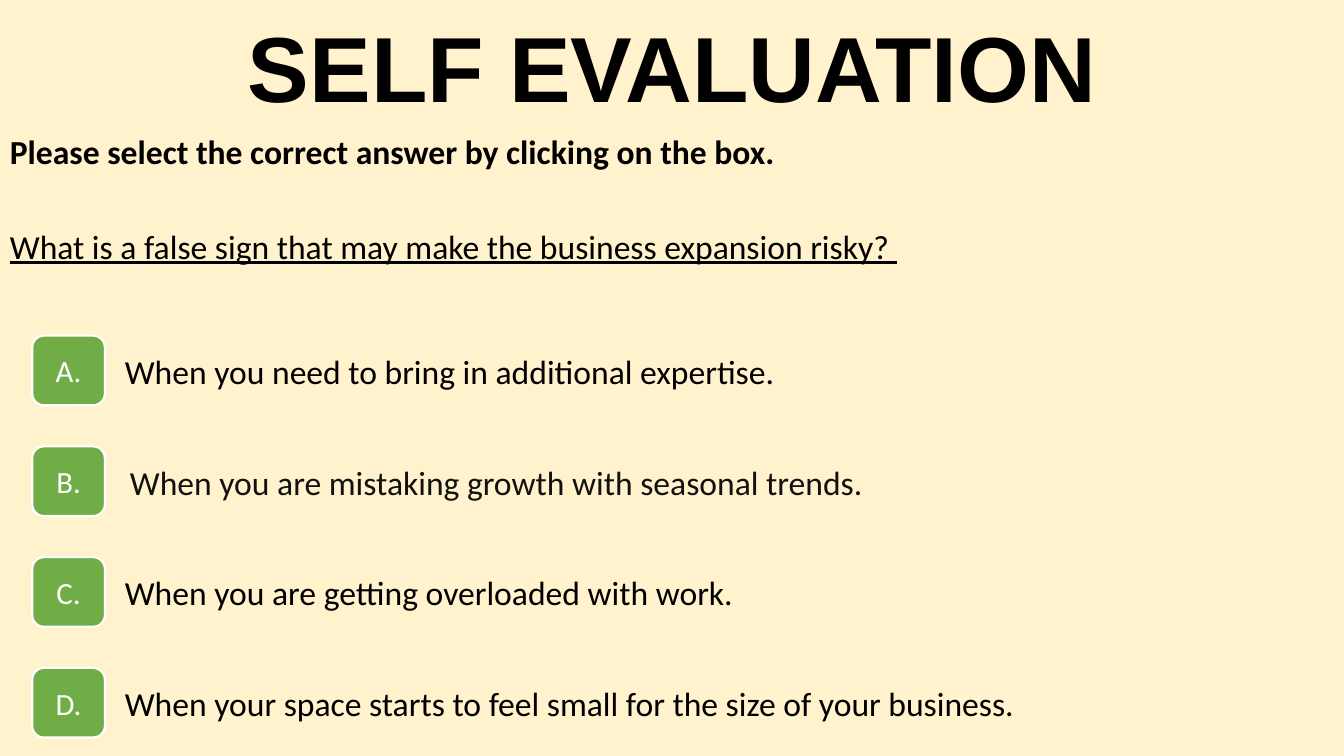
from pptx import Presentation, util as u
from pptx.dml.color import RGBColor
from pptx.enum import shapes, text

CREAM = RGBColor(0xFF, 0xF2, 0xCC)
GREEN = RGBColor(0x70, 0xAD, 0x47)
WHITE = RGBColor(0xFF, 0xFF, 0xFF)
BLACK = RGBColor(0, 0, 0)
CHARCOAL = RGBColor(0x11, 0x11, 0x11)

WIDTH, HEIGHT = u.Inches(13.333), u.Inches(7.5)
FIRST_ROW, ROW_STEP = 44.4, 14.65
ANSWER_DROP = 1.3

ANSWERS = [
    ("A.", "When you need to bring in additional expertise.", {}),
    ("B.", "When you are mistaking growth with seasonal trends.",
     dict(left=8.93, drop=0, color=CHARCOAL, spacing=1.25, after=8)),
    ("C.", "When you are getting overloaded with work.", {}),
    ("D.", "When your space starts to feel small for the size of your business.", {}),
]


def area(left, top, width, height):
    return (int(WIDTH * left / 100), int(HEIGHT * top / 100),
            int(WIDTH * width / 100), int(HEIGHT * height / 100))


def write(sp, words, size=24, font="Calibri", color=BLACK, bold=False,
          underline=False, align=text.PP_ALIGN.LEFT,
          anchor=text.MSO_ANCHOR.TOP, spacing=None, after=None):
    tf = sp.text_frame
    tf.word_wrap = True
    tf.vertical_anchor = anchor
    p = tf.paragraphs[0]
    p.alignment = align
    if spacing is not None:
        p.line_spacing = spacing
    if after is not None:
        p.space_after = u.Pt(after)
    r = p.add_run()
    r.text = words
    r.font.size = u.Pt(size)
    r.font.name = font
    r.font.bold = bold
    r.font.underline = underline
    r.font.color.rgb = color


def add_text(s, box, words, **style):
    sp = s.shapes.add_textbox(*area(*box))
    write(sp, words, **style)


def add_button(s, top, letter):
    sp = s.shapes.add_shape(shapes.MSO_SHAPE.ROUNDED_RECTANGLE,
                            *area(2.4, top, 5.4, 9.2))
    sp.shadow.inherit = False
    sp.fill.solid()
    sp.fill.fore_color.rgb = GREEN
    sp.line.color.rgb = WHITE
    sp.line.width = u.Pt(1.5)
    write(sp, letter, size=22, color=WHITE, align=text.PP_ALIGN.CENTER,
          anchor=text.MSO_ANCHOR.MIDDLE)


def add_answer(s, top, letter, words, left=8.55, drop=ANSWER_DROP, **style):
    add_button(s, top, letter)
    add_text(s, (left, top + drop, 78.75, 6.7), words, **style)


def main():
    prs = Presentation()
    prs.slide_width, prs.slide_height = WIDTH, HEIGHT
    s = prs.slides.add_slide(prs.slide_layouts[6])
    s.background.fill.solid()
    s.background.fill.fore_color.rgb = CREAM

    add_text(s, (6.9, 0, 86.25, 19.33), "SELF EVALUATION", size=66,
             font="Arial", bold=True, align=text.PP_ALIGN.CENTER,
             anchor=text.MSO_ANCHOR.MIDDLE, spacing=0.9)
    add_text(s, (0, 16.67, 72.9, 6.7),
             "Please select the correct answer by clicking on the box.", bold=True)
    add_text(s, (0, 29.2, 72.9, 6.7),
             "What is a false sign that may make the business expansion risky? ",
             underline=True)
    for row, (letter, words, style) in enumerate(ANSWERS):
        add_answer(s, FIRST_ROW + row * ROW_STEP, letter, words, **style)

    prs.save("out.pptx")


if __name__ == "__main__":
    main()
